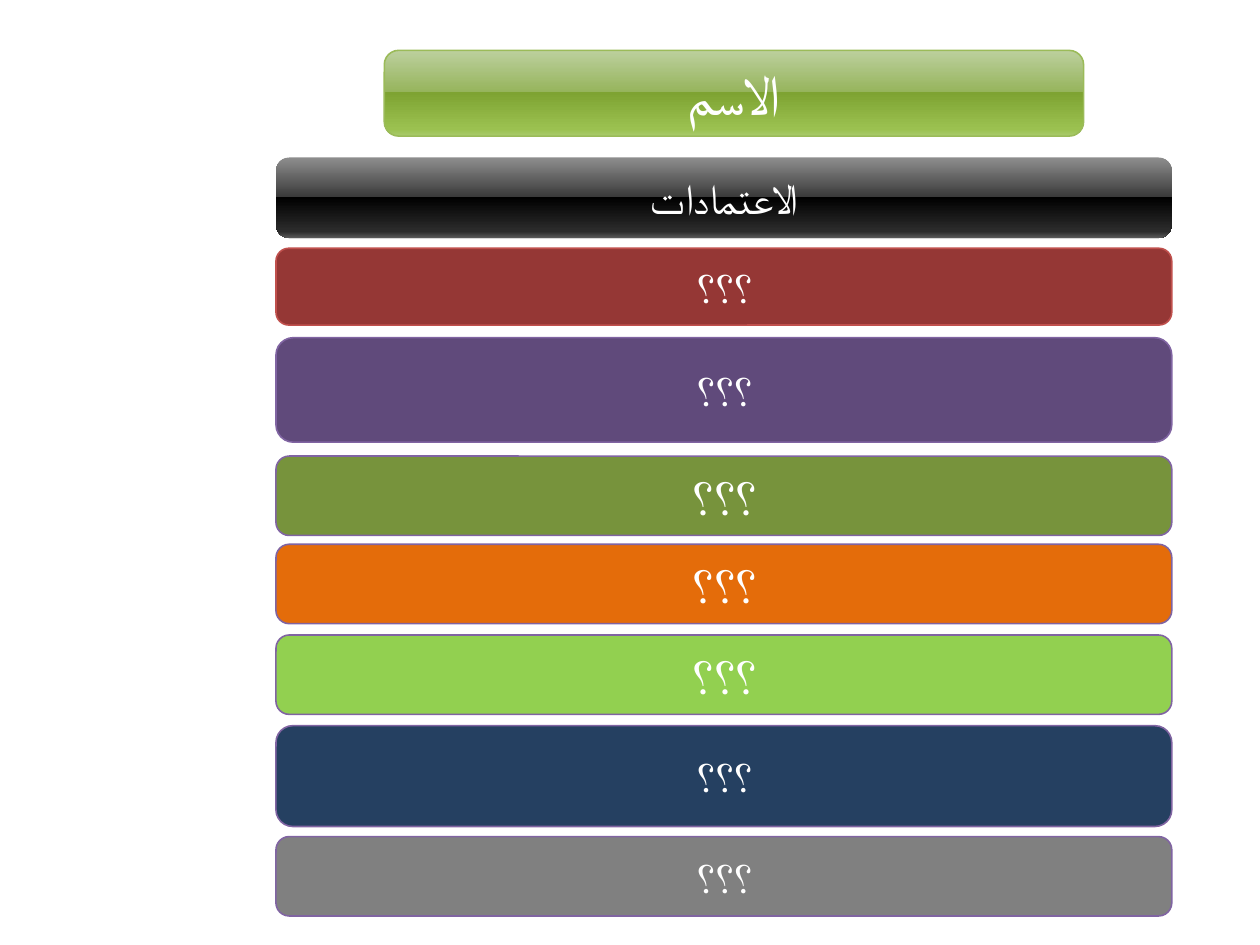
from lxml import etree
from pptx import Presentation
from pptx.dml.color import RGBColor
from pptx.enum.shapes import MSO_SHAPE
from pptx.enum.text import MSO_ANCHOR, PP_ALIGN
from pptx.oxml.ns import qn
from pptx.util import Inches, Pt

ROUNDED = MSO_SHAPE.ROUNDED_RECTANGLE
MIDDLE = MSO_ANCHOR.MIDDLE
CENTER = PP_ALIGN.CENTER

THEME = {
    "font": "Times New Roman",
    "text": "FFFFFF",
    "outline_width": 0.9,
    "title_size": 32, "large": 28, "normal": 24,
    "green_edge": "9BBB59", "red_edge": "C0504D", "purple_edge": "8064A2",
    "green_gloss": ["BCD09D", "96B45C", "7EA332", "9BC150", "A9CB6D"],
    "black_gloss": ["8E8E8E", "3A3A3A", "000000", "2C2C2C", "5C5C5C"],
    "gloss_stops": [0, 49, 49, 92, 100],
}

# Content: text, top, height, fill, outline, type size
NAME_BAR = ("الاسم", 0.4, 0.68, "green_gloss", "green_edge", "title_size")
CREDIT_BARS = [
    ("الاعتمادات", 1.25, 0.64, "black_gloss", None, "normal"),
    ("؟؟؟", 1.97, 0.61, "953735", "red_edge", "normal"),
    ("؟؟؟", 2.68, 0.83, "604A7B", "purple_edge", "normal"),
    ("؟؟؟", 3.62, 0.63, "77933C", "purple_edge", "large"),
    ("؟؟؟", 4.32, 0.63, "E46C0A", "purple_edge", "large"),
    ("؟؟؟", 5.04, 0.63, "92D050", "purple_edge", "large"),
    ("؟؟؟", 5.76, 0.8, "254061", "purple_edge", "normal"),
    ("؟؟؟", 6.64, 0.63, "808080", "purple_edge", "normal"),
]
NAME_SPAN = (3.05, 5.55)
CREDIT_SPAN = (2.19, 7.11)


def fill_gloss(fill, colors):
    """Vertical gradient with a hard edge at the middle."""
    fill.gradient()
    fill.gradient_angle = 270
    stops = fill.gradient_stops._gsLst
    for stop in list(stops):
        stops.remove(stop)
    for position, color in zip(THEME["gloss_stops"], colors):
        stop = etree.SubElement(stops, qn("a:gs"), pos=str(position * 1000))
        etree.SubElement(stop, qn("a:srgbClr"), val=color)


def add_bar(slide, span, content):
    text, top, height, fill, edge, size = content
    left, width = span
    bar = slide.shapes.add_shape(
        ROUNDED, Inches(left), Inches(top), Inches(width), Inches(height))
    bar.shadow.inherit = False

    # Fill and outline
    if fill in THEME:
        fill_gloss(bar.fill, THEME[fill])
    else:
        bar.fill.solid()
        bar.fill.fore_color.rgb = RGBColor.from_string(fill)
    if edge:
        bar.line.color.rgb = RGBColor.from_string(THEME[edge])
        bar.line.width = Pt(THEME["outline_width"])
    else:
        bar.line.fill.background()

    # Right-to-left label
    bar.text_frame.vertical_anchor = MIDDLE
    paragraph = bar.text_frame.paragraphs[0]
    paragraph.alignment = CENTER
    paragraph._p.get_or_add_pPr().set("rtl", "1")
    label = paragraph.add_run()
    label.text = text
    for name, value in {"name": THEME["font"], "size": Pt(THEME[size])}.items():
        setattr(label.font, name, value)
    label.font.color.rgb = RGBColor.from_string(THEME["text"])
    etree.SubElement(label._r.get_or_add_rPr(), qn("a:cs"),
                     typeface=THEME["font"])


def main():
    deck = Presentation()
    deck.slide_width, deck.slide_height = Inches(10), Inches(7.5)
    slide = deck.slides.add_slide(deck.slide_layouts[6])
    add_bar(slide, NAME_SPAN, NAME_BAR)
    for credit in CREDIT_BARS:
        add_bar(slide, CREDIT_SPAN, credit)
    deck.save("out.pptx")


if __name__ == "__main__":
    main()
